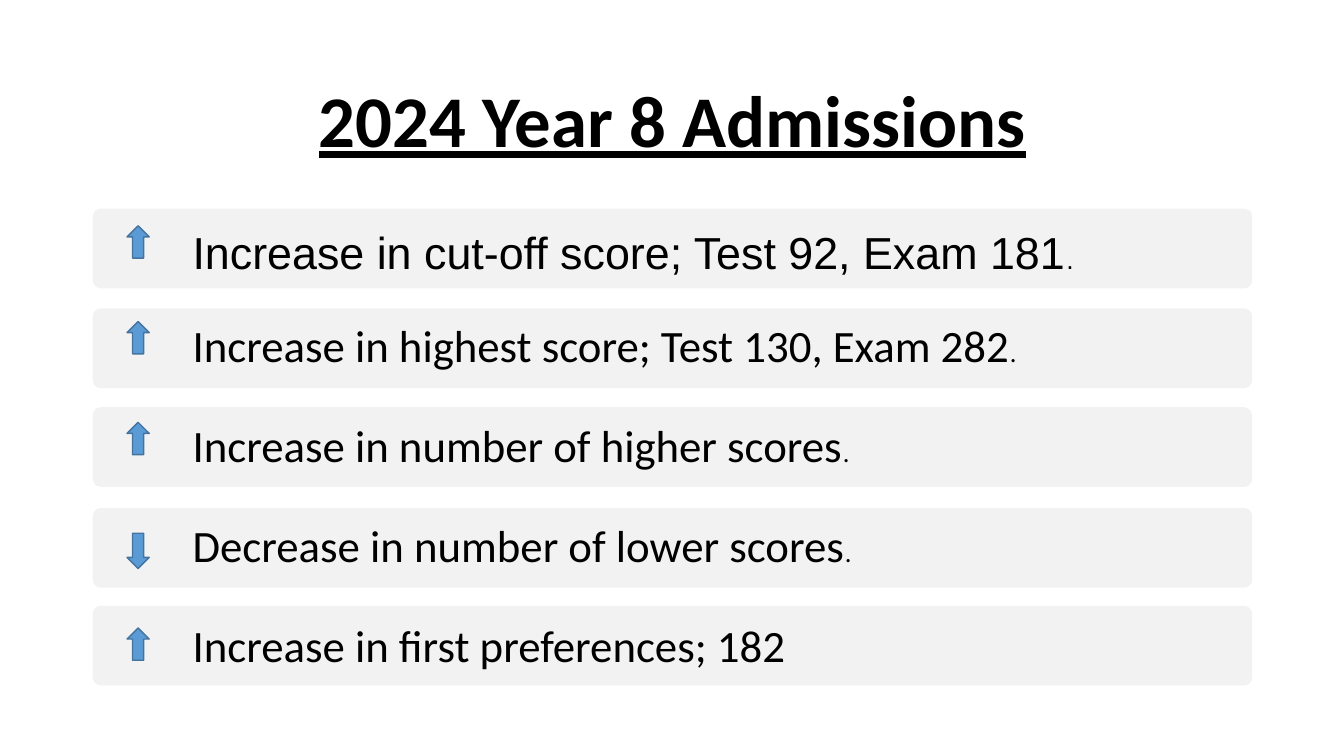
from dataclasses import dataclass

from pptx import Presentation
from pptx.dml.color import RGBColor
from pptx.enum.shapes import MSO_SHAPE
from pptx.enum.text import MSO_ANCHOR, PP_ALIGN
from pptx.slide import Slide
from pptx.text.text import TextFrame
from pptx.util import Emu, Pt

EMU_PER_PX = 9144
TITLE_ONLY_LAYOUT = 5

BLACK = RGBColor(0x00, 0x00, 0x00)
BAR_GREY = RGBColor(0xF2, 0xF2, 0xF2)
ARROW_BLUE = RGBColor(0x5B, 0x9B, 0xD5)
ARROW_OUTLINE = RGBColor(0x43, 0x73, 0x9E)

BAR = MSO_SHAPE.ROUNDED_RECTANGLE
UP = MSO_SHAPE.UP_ARROW
DOWN = MSO_SHAPE.DOWN_ARROW
MIDDLE = MSO_ANCHOR.MIDDLE
LEFT = PP_ALIGN.LEFT
CENTER = PP_ALIGN.CENTER

BAR_LEFT, BAR_WIDTH, ROW_HEIGHT = 92, 1150, 79
TEXT_LEFT, TEXT_WIDTH, TEXT_INSET = 183, 1059, 8
ARROW_LEFT, ARROW_WIDTH = 126, 22


@dataclass(frozen=True)
class Finding:
    text: str
    bar_top: int
    text_top: int
    arrow_top: int
    arrow: MSO_SHAPE = UP
    arrow_height: int = 32
    font: str = "Calibri"
    ending: str = "."


FINDINGS = [
    Finding("Increase in cut-off score; Test 92, Exam 181", 207, 213, 224, font="Arial"),
    Finding("Increase in highest score; Test 130, Exam 282", 306, 306, 319),
    Finding("Increase in number of higher scores", 404, 405, 419),
    Finding("Decrease in number of lower scores", 504, 504, 529, DOWN, 35),
    Finding("Increase in first preferences; 182", 601, 603, 623, ending=""),
]


def px(length: int) -> Emu:
    return Emu(length * EMU_PER_PX)


def box(left: int, top: int, width: int, height: int) -> tuple[Emu, Emu, Emu, Emu]:
    return px(left), px(top), px(width), px(height)


def write_text(frame: TextFrame, text: str, *, size: int, font: str = "Calibri",
               align: PP_ALIGN = LEFT, bold: bool = False,
               underline: bool = False) -> None:
    """Append a formatted run to the first paragraph of the frame."""
    frame.word_wrap = True
    frame.vertical_anchor = MIDDLE
    paragraph = frame.paragraphs[0]
    paragraph.alignment = align
    paragraph.line_spacing = 0.9
    run = paragraph.add_run()
    run.text = text
    run.font.name = font
    run.font.size = Pt(size)
    run.font.bold = bold
    run.font.underline = underline
    run.font.color.rgb = BLACK


def add_title(slide: Slide, text: str) -> None:
    title = slide.shapes.title
    title.left, title.top, title.width, title.height = box(BAR_LEFT, 61, BAR_WIDTH, 124)
    write_text(title.text_frame, text, size=52, align=CENTER, bold=True, underline=True)


def add_bar(slide: Slide, finding: Finding) -> None:
    bar = slide.shapes.add_shape(
        BAR, *box(BAR_LEFT, finding.bar_top, BAR_WIDTH, ROW_HEIGHT))
    bar.adjustments[0] = 0.1
    bar.shadow.inherit = False
    bar.fill.solid()
    bar.fill.fore_color.rgb = BAR_GREY
    bar.line.fill.background()


def add_label(slide: Slide, finding: Finding) -> None:
    label = slide.shapes.add_textbox(
        *box(TEXT_LEFT, finding.text_top, TEXT_WIDTH, ROW_HEIGHT))
    frame = label.text_frame
    frame.margin_left = frame.margin_right = px(TEXT_INSET)
    frame.margin_top = frame.margin_bottom = px(TEXT_INSET)
    write_text(frame, finding.text, size=32, font=finding.font)
    if finding.ending:
        write_text(frame, finding.ending, size=19, font=finding.font)


def add_arrow(slide: Slide, finding: Finding) -> None:
    arrow = slide.shapes.add_shape(
        finding.arrow,
        *box(ARROW_LEFT, finding.arrow_top, ARROW_WIDTH, finding.arrow_height))
    arrow.shadow.inherit = False
    arrow.fill.solid()
    arrow.fill.fore_color.rgb = ARROW_BLUE
    arrow.line.color.rgb = ARROW_OUTLINE
    arrow.line.width = Pt(1)


def main() -> None:
    presentation = Presentation()
    presentation.slide_width = px(1333)
    presentation.slide_height = px(750)
    slide = presentation.slides.add_slide(presentation.slide_layouts[TITLE_ONLY_LAYOUT])
    add_title(slide, "2024 Year 8 Admissions")
    for finding in FINDINGS:
        add_bar(slide, finding)
        add_label(slide, finding)
        add_arrow(slide, finding)
    presentation.save("out.pptx")


if __name__ == "__main__":
    main()
